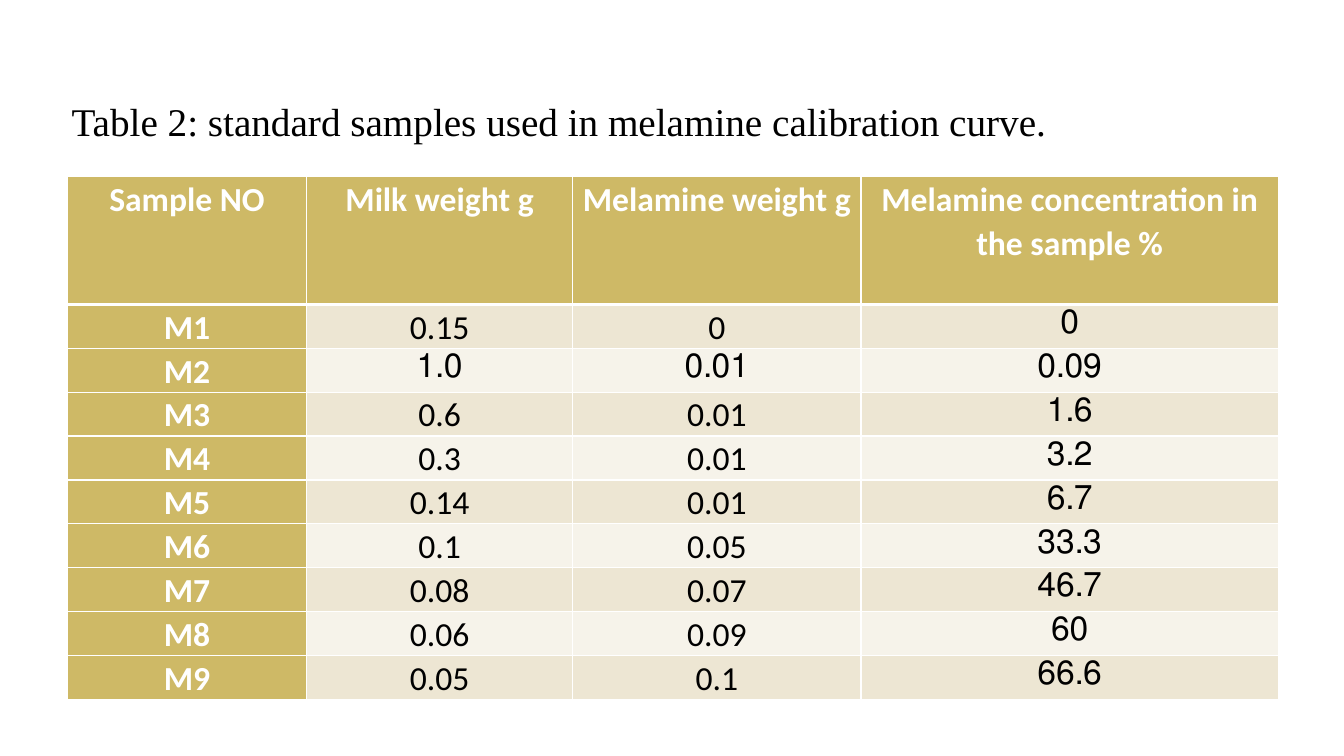
"""Build a slide with the table of standard samples for melamine calibration."""
from dataclasses import dataclass

from lxml.etree import SubElement
from pptx import Presentation
from pptx.dml.color import RGBColor
from pptx.enum.text import MSO_ANCHOR as Anchor, PP_ALIGN as Align
from pptx.oxml.ns import qn
from pptx.util import Inches, Pt

WHITE, BLACK, GOLD = "FFFFFF", "000000", "CEB966"
BANDS = ("EDE6D3", "F6F3EA")
COLUMN_WIDTHS = (2.37, 2.64, 2.86, 4.14)
HEADER_HEIGHT, ROW_HEIGHT = 1.27, 0.41
HEADINGS = ("Sample NO", "Milk weight g", "Melamine weight g",
            "Melamine concentration in the sample %")


@dataclass
class Sample:
    name: str
    milk: str
    melamine: str
    concentration: str
    arial_columns: tuple[int, ...] = (3,)

    def values(self) -> tuple[str, ...]:
        return self.name, self.milk, self.melamine, self.concentration


SAMPLES = (
    Sample("M1", "0.15", "0", "0"),
    Sample("M2", "1.0", "0.01", "0.09", arial_columns=(1, 2, 3)),
    Sample("M3", "0.6", "0.01", "1.6"),
    Sample("M4", "0.3", "0.01", "3.2"),
    Sample("M5", "0.14", "0.01", "6.7"),
    Sample("M6", "0.1", "0.05", "33.3"),
    Sample("M7", "0.08", "0.07", "46.7"),
    Sample("M8", "0.06", "0.09", "60"),
    Sample("M9", "0.05", "0.1", "66.6"),
)


def color(value: str) -> RGBColor:
    return RGBColor.from_string(value)


def write(frame, text: str, *, size: float, font: str, ink: str, bold: bool = False,
          align: Align = Align.CENTER, after: float = 0, rtl: bool = False) -> None:
    para = frame.paragraphs[0]
    para.alignment = align
    para.line_spacing = 1.07
    para.space_before, para.space_after = Pt(0), Pt(after)
    if rtl:
        para._p.get_or_add_pPr().set("rtl", "1")
    span = para.add_run()
    span.text = text
    span.font.size, span.font.name, span.font.bold = Pt(size), font, bold
    span.font.color.rgb = color(ink)


def add_borders(cell, top: float = 1, bottom: float = 1) -> None:
    properties = cell._tc.get_or_add_tcPr()
    for side, width in (("L", 1), ("R", 1), ("T", top), ("B", bottom)):
        line = SubElement(properties, qn(f"a:ln{side}"), w=str(Pt(width)))
        fill = SubElement(line, qn("a:solidFill"))
        SubElement(fill, qn("a:srgbClr"), val=WHITE)


def fill_cell(cell, text: str, *, fill: str, top: float = 1, bottom: float = 1,
              **text_format) -> None:
    cell.margin_left = cell.margin_right = Inches(0.07)
    cell.margin_top = cell.margin_bottom = 0
    add_borders(cell, top, bottom)
    cell.fill.solid()
    cell.fill.fore_color.rgb = color(fill)
    write(cell.text_frame, text, size=24, **text_format)


def add_title(page) -> None:
    title = page.shapes.title
    title.left, title.top = Inches(0.61), Inches(0.79)
    title.width, title.height = Inches(12), Inches(0.78)
    title.text_frame.word_wrap = True
    title.text_frame.vertical_anchor = Anchor.MIDDLE
    write(title.text_frame, "Table 2: standard samples used in melamine calibration curve.",
          size=28, font="Times New Roman", ink=BLACK, align=Align.LEFT, after=8)


def add_sample_table(page) -> None:
    height = HEADER_HEIGHT + ROW_HEIGHT * len(SAMPLES)
    table = page.shapes.add_table(len(SAMPLES) + 1, len(HEADINGS), Inches(0.67), Inches(1.75),
                                  Inches(sum(COLUMN_WIDTHS)), Inches(height)).table
    table.first_col = True
    for column, width in zip(table.columns, COLUMN_WIDTHS):
        column.width = Inches(width)
    for row in table.rows:
        row.height = Inches(ROW_HEIGHT)
    table.rows[0].height = Inches(HEADER_HEIGHT)

    for column, heading in enumerate(HEADINGS):
        fill_cell(table.cell(0, column), heading, fill=GOLD, bottom=3,
                  font="Calibri", ink=WHITE, bold=True, after=8)
    for row, sample in enumerate(SAMPLES, start=1):
        for column, value in enumerate(sample.values()):
            is_name = column == 0
            is_arial = column in sample.arial_columns
            fill_cell(table.cell(row, column), value,
                      fill=GOLD if is_name else BANDS[(row - 1) % 2],
                      top=3 if row == 1 else 1,
                      font="Arial" if is_arial else "Calibri",
                      ink=WHITE if is_name else BLACK, bold=is_name, rtl=is_arial)


def main() -> None:
    deck = Presentation()
    deck.slide_width, deck.slide_height = Inches(13.33), Inches(7.5)
    page = deck.slides.add_slide(deck.slide_layouts[5])
    add_title(page)
    add_sample_table(page)
    deck.save("out.pptx")


if __name__ == "__main__":
    main()
